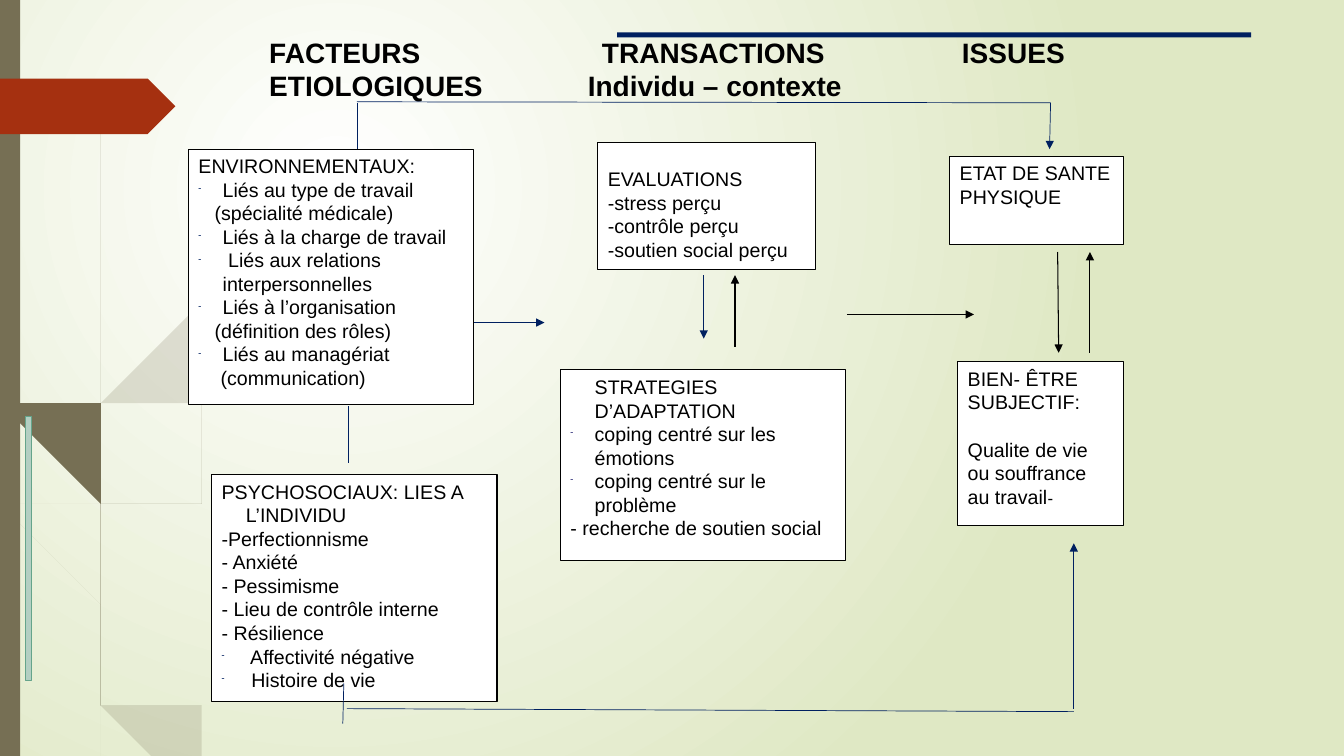
from dataclasses import dataclass
from lxml.etree import SubElement
from pptx import Presentation
from pptx.dml.color import RGBColor
from pptx.enum.shapes import MSO_CONNECTOR, MSO_SHAPE
from pptx.enum.text import MSO_ANCHOR, MSO_AUTO_SIZE, PP_ALIGN
from pptx.oxml.ns import qn
from pptx.util import Inches, Pt

BLACK, WHITE, NAVY, OLIVE = "000000", "FFFFFF", "002060", "766F54"
INDENT = 0.24


@dataclass
class Item:
    text: str
    left: float = 0
    hang: float = 0
    bullet: str = ""
    before: float = 0


@dataclass
class Card:
    x: float
    y: float
    w: float
    h: float
    items: list[Item]
    top: float = 0.05


@dataclass
class Link:
    x1: float
    y1: float
    x2: float
    y2: float
    color: str = NAVY
    width: float = 0.5
    arrow: bool = True


@dataclass
class Blade:
    down: list[tuple[float, float]]
    up: list[tuple[float, float]]
    alpha: int = 100


def rgb(color: str) -> RGBColor:
    return RGBColor.from_string(color)


def hung(text: str, bullet: str = "") -> Item:
    return Item(text, INDENT, -INDENT, bullet)


def curve(pts: list[tuple[float, float]], steps: int = 6) -> list[tuple[float, float]]:
    ends = [pts[0], *pts, pts[-1]]
    out = [pts[0]]
    for a, b, c, d in zip(ends, ends[1:], ends[2:], ends[3:]):
        for n in range(1, steps + 1):
            t = n / steps
            out.append(tuple(
                (2 * q + (r - p) * t + (2 * p - 5 * q + 4 * r - s) * t ** 2
                 + (3 * q - p - 3 * r + s) * t ** 3) / 2
                for p, q, r, s in zip(a, b, c, d)))
    return out


def paint(shape, fill: str, line: str = "") -> None:
    shape.shadow.inherit = False
    shape.fill.solid()
    shape.fill.fore_color.rgb = rgb(fill)
    if line:
        shape.line.color.rgb = rgb(line)
        shape.line.width = Pt(0.75)
    else:
        shape.line.fill.background()


def block(slide, kind, x: float, y: float, w: float, h: float, fill: str, line: str = ""):
    shape = slide.shapes.add_shape(kind, Inches(x), Inches(y), Inches(w), Inches(h))
    paint(shape, fill, line)
    return shape


def draw_blade(slide, blade: Blade) -> None:
    pts = curve(blade.down) + curve(blade.up)
    form = slide.shapes.build_freeform(*pts[0], scale=Inches(1))
    form.add_line_segments(pts[1:], close=True)
    shape = form.convert_to_shape()
    paint(shape, OLIVE)
    if blade.alpha < 100:
        tint = shape.element.spPr.find(qn("a:solidFill"))[0]
        SubElement(tint, qn("a:alpha"), val=str(blade.alpha * 1000))


def draw_card(slide, card: Card):
    shape = block(slide, MSO_SHAPE.RECTANGLE, card.x, card.y, card.w, card.h, WHITE, BLACK)
    frame = shape.text_frame
    frame.word_wrap = True
    frame.vertical_anchor = MSO_ANCHOR.TOP
    frame.margin_top = Inches(card.top)
    frame.text = "\n".join(item.text for item in card.items)
    for para, item in zip(frame.paragraphs, card.items):
        props = para._p.get_or_add_pPr()
        props.set("marL", str(Inches(item.left)))
        props.set("indent", str(Inches(item.hang)))
        if item.bullet:
            tint = SubElement(props, qn("a:buClr"))
            SubElement(tint, qn("a:srgbClr"), val=item.bullet)
            SubElement(props, qn("a:buSzPct"), val="45000")
            SubElement(props, qn("a:buChar"), char="-")
        para.alignment = PP_ALIGN.LEFT
        if item.before:
            para.space_before = Pt(item.before)
        style(para, 14)
    return shape


def style(para, size: int, bold: bool = False) -> None:
    for run in para.runs:
        run.font.name = "Arial"
        run.font.size = Pt(size)
        run.font.bold = bold
        run.font.color.rgb = rgb(BLACK)


def draw_link(slide, link: Link) -> None:
    ends = [Inches(v) for v in (link.x1, link.y1, link.x2, link.y2)]
    wire = slide.shapes.add_connector(MSO_CONNECTOR.STRAIGHT, *ends)
    wire.line.color.rgb = rgb(link.color)
    wire.line.width = Pt(link.width)
    if link.arrow:
        SubElement(wire.line._get_or_add_ln(), qn("a:tailEnd"), type="triangle")
    SubElement(wire.element.spPr, qn("a:effectLst"))


def draw_title(slide) -> None:
    title = slide.shapes.title
    title.left, title.top = Inches(2.57), Inches(0.28)
    title.width, title.height = Inches(8.83), Inches(1.08)
    frame = title.text_frame
    frame.auto_size = MSO_AUTO_SIZE.NONE
    frame.word_wrap = True
    frame.vertical_anchor = MSO_ANCHOR.TOP
    frame.margin_top = Inches(0.07)
    frame.text = "FACTEURS\tTRANSACTIONS\tISSUES\nETIOLOGIQUES\tIndividu – contexte"
    for para, stops in zip(frame.paragraphs, [(3.3, 6.87), (3.16,)]):
        tabs = SubElement(para._p.get_or_add_pPr(), qn("a:tabLst"))
        for stop in stops:
            SubElement(tabs, qn("a:tab"), pos=str(Inches(stop)), algn="l")
        para.alignment = PP_ALIGN.LEFT
        style(para, 20, True)


def draw_back(slide) -> None:
    fill = slide.background.fill
    fill.gradient()
    for stop, color in zip(fill.gradient_stops, (WHITE, "DFE8C4")):
        stop.color.rgb = rgb(color)
    grad = slide.element.find(".//" + qn("a:gradFill"))
    grad.remove(grad.find(qn("a:lin")))
    ring = SubElement(grad, qn("a:path"), {"path": "circle"})
    SubElement(ring, qn("a:fillToRect"), l="50000", t="50000", r="100000", b="100000")


BLADES = [
    Blade([(0, 2.99), (0.11, 3.5), (0.28, 4.7), (0.65, 6.21), (0.92, 6.93), (1.14, 7.5)],
          [(1.24, 7.5), (1.05, 7.11), (0.93, 6.83), (0.7, 6.19), (0.31, 4.69), (0.17, 3.76), (0.09, 3.22), (0, 2.82)], 20),
    Blade([(0.14, 3.45), (0.17, 3.76), (0.58, 5.22), (0.84, 5.99), (1.23, 6.94), (1.5, 7.5)],
          [(1.55, 7.5), (1.27, 6.92), (0.92, 6.07), (0.62, 5.2), (0.14, 3.45)], 20),
    Blade([(3.12, 1.53), (2.68, 1.97), (2.28, 2.44), (1.58, 3.48), (1.07, 4.61), (0.85, 5.84), (0.87, 6.46), (1.05, 7.11)],
          [(1.03, 7.06), (0.91, 6.46), (0.88, 5.84), (1.1, 4.62), (1.6, 3.49), (2.29, 2.45), (2.68, 1.98), (3.12, 1.54)], 20),
    Blade([(0.03, 0), (0.07, 1.1), (0.17, 2.33), (0.33, 3.55), (0.57, 4.77), (0.68, 5.57), (0.93, 6.59), (1.27, 7.49)],
          [(1.36, 7.49), (1.1, 6.91), (0.98, 6.57), (0.72, 5.56), (0.55, 4.53), (0.36, 3.55), (0.19, 2.32), (0.08, 1.09), (0.04, 0)]),
    Blade([(0.7, 1.41), (0.56, 2.45), (0.52, 3.49), (0.55, 4.49), (0.64, 5.05), (0.88, 5.92), (1.11, 6.56), (1.52, 7.49)],
          [(1.57, 7.49), (1.36, 7.06), (1.13, 6.49), (0.93, 5.9), (0.6, 4.72), (0.54, 3.49), (0.58, 2.45), (0.7, 1.41)]),
    Blade([(2.61, 3.44), (2.04, 4.05), (1.56, 4.74), (1.22, 5.51), (1.06, 6.31), (1.1, 6.91), (1.22, 7.19)],
          [(1.21, 7.16), (1.11, 6.56), (1.11, 6.33), (1.25, 5.52), (1.58, 4.76), (2.05, 4.06), (2.61, 3.44)]),
]
CARDS = [
    Card(1.87, 1.48, 2.83, 2.53, [
        hung("ENVIRONNEMENTAUX:"), hung("Liés au type de travail", NAVY),
        Item("(spécialité médicale)", 0.16), hung("Liés à la charge de travail", NAVY),
        hung(" Liés aux relations interpersonnelles", NAVY), hung("Liés à l’organisation", NAVY),
        Item("(définition des rôles)", 0.16), hung("Liés au managériat", NAVY), Item("(communication)", 0.22)]),
    Card(2.1, 4.71, 2.83, 2.25, [
        *map(hung, ("PSYCHOSOCIAUX: LIES A L’INDIVIDU", "-Perfectionnisme", "- Anxiété", "- Pessimisme",
                    "- Lieu de contrôle interne", "- Résilience")),
        hung(" Affectivité négative", NAVY), hung(" Histoire de vie", NAVY)]),
    Card(5.93, 1.41, 2.16, 1.26, [
        Item(t) for t in ("EVALUATIONS", "-stress perçu", "-contrôle perçu", "-soutien social perçu")], 0.25),
    Card(5.56, 3.67, 2.83, 1.89, [
        Item("STRATEGIES D’ADAPTATION", INDENT), hung("coping centré sur les émotions", "262673"),
        hung("coping centré sur le problème", "262673"), hung("- recherche de soutien social")]),
    Card(9.42, 1.55, 1.72, 0.88, [Item("ETAT DE SANTE"), Item("PHYSIQUE")]),
    Card(9.5, 3.59, 1.64, 1.62, [
        Item("BIEN- ÊTRE SUBJECTIF:"), Item("Qualite de vie ou souffrance au travail", before=16.8)]),
]
LINKS = [
    *(Link(*ends, BLACK, 0.75) for ends in (
        (8.4, 3.12, 9.66, 3.12), (7.29, 3.44, 7.29, 2.73), (10.49, 2.5, 10.5, 3.5), (10.81, 3.5, 10.81, 2.5))),
    *(Link(*ends) for ends in (
        (10.65, 7.03, 10.65, 5.39), (6.98, 2.73, 6.98, 3.36), (10.42, 1.02, 10.41, 1.48), (4.7, 3.2, 5.4, 3.2))),
    *(Link(*ends, arrow=False) for ends in (
        (3.44, 7.03, 10.65, 7.06), (3.4, 7.18, 3.41, 6.78), (3.54, 1.01, 10.42, 1.02),
        (3.54, 1.02, 3.54, 1.48), (3.46, 4.03, 3.46, 4.59))),
]


def main() -> None:
    deck = Presentation()
    deck.slide_width, deck.slide_height = Inches(13.33), Inches(7.5)
    slide = deck.slides.add_slide(deck.slide_layouts[5])
    draw_back(slide)
    for blade in BLADES:
        draw_blade(slide, blade)
    block(slide, MSO_SHAPE.RECTANGLE, 0, 0, 0.2, 7.5, OLIVE)
    block(slide, MSO_SHAPE.RECTANGLE, 6.12, 0.32, 6.29, 0.05, NAVY)
    block(slide, MSO_SHAPE.RECTANGLE, 0.25, 4.13, 0.06, 2.62, "B3CFC2", "65A48B")
    block(slide, MSO_SHAPE.PENTAGON, 0, 0.78, 1.74, 0.55, "A53010")
    draw_title(slide)
    cards = [draw_card(slide, card) for card in CARDS]
    dash = cards[-1].text_frame.paragraphs[-1].add_run()
    dash.text = "-"
    style(cards[-1].text_frame.paragraphs[-1], 14)
    dash.font.size = Pt(12)
    for link in LINKS:
        draw_link(slide, link)


    deck.save("out.pptx")


if __name__ == "__main__":
    main()
